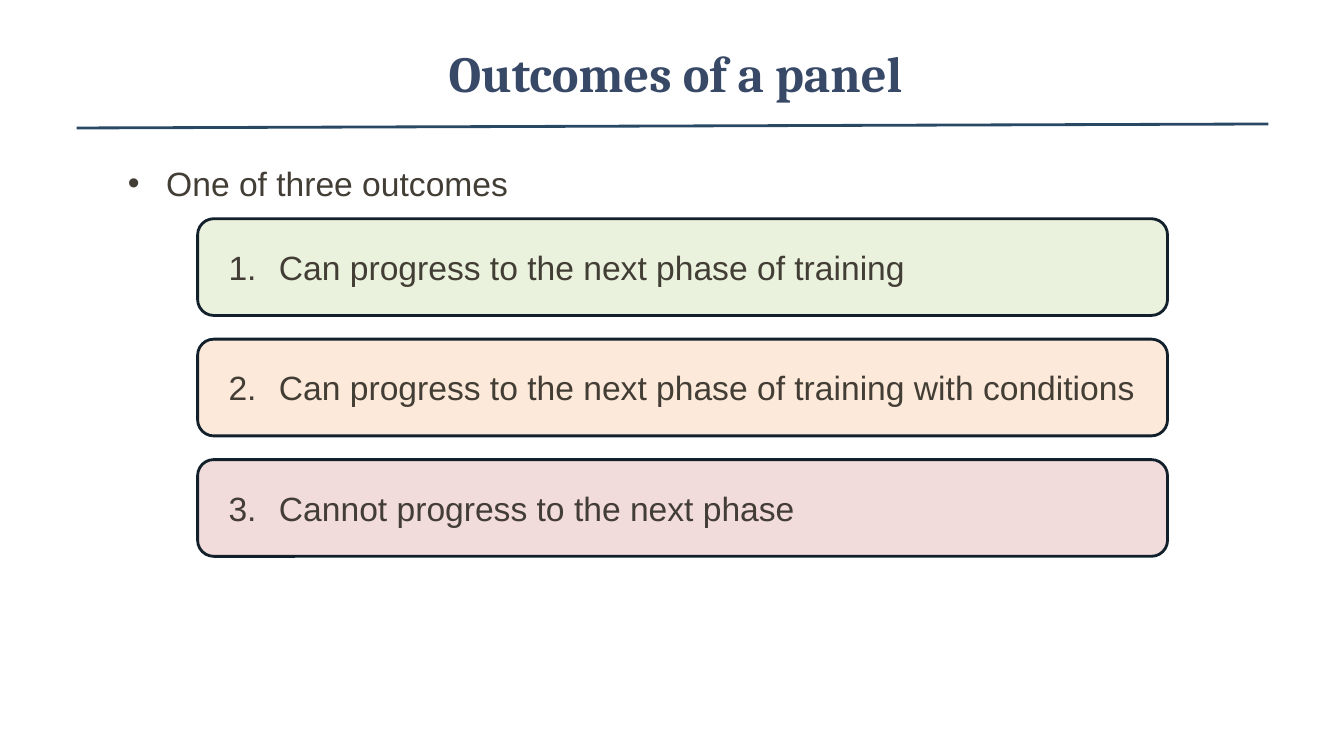
from lxml import etree
from pptx import Presentation
from pptx.dml.color import RGBColor
from pptx.enum import shapes, text
from pptx.oxml import ns
from pptx.util import Inches, Pt

# Content
TITLE = "Outcomes of a panel"
LEAD = "One of three outcomes"
GREEN = RGBColor(0xEA, 0xF1, 0xDD)
PEACH = RGBColor(0xFD, 0xE9, 0xD9)
PINK = RGBColor(0xF2, 0xDB, 0xDB)
OUTCOMES = [
    ("Can progress to the next phase of training", GREEN),
    ("Can progress to the next phase of training with conditions", PEACH),
    ("Cannot progress to the next phase", PINK),
]

# Colours and layout
NAVY = RGBColor(0x38, 0x49, 0x67)
RULE = RGBColor(0x29, 0x48, 0x64)
EDGE = RGBColor(0x12, 0x20, 0x2C)
INK = RGBColor(0x43, 0x3E, 0x35)
LEFT, TOP, WIDTH, HEIGHT, STEP = 1.96, 2.17, 9.62, 0.96, 1.195


def write(par, words, size, face, color, bold=False):
    run = par.add_run()
    run.text = words
    font = run.font
    font.size, font.name, font.bold = Pt(size), face, bold
    font.color.rgb = color


def add_item(frame, words, hang, tag, **marks):
    """Write one bulleted or numbered line with a hanging indent."""
    par = frame.paragraphs[0]
    par.alignment = text.PP_ALIGN.LEFT
    props = par._p.get_or_add_pPr()
    props.set("marL", str(Inches(hang)))
    props.set("indent", str(-Inches(hang)))
    etree.SubElement(props, ns.qn("a:buFont"), typeface="Arial")
    etree.SubElement(props, ns.qn(tag), **marks)
    write(par, words, 24, "Arial", INK)


def main():
    prs = Presentation()
    prs.slide_width, prs.slide_height = Inches(13.33), Inches(7.5)
    slide = prs.slides.add_slide(prs.slide_layouts[5])

    # Title
    title = slide.shapes.title
    title.left, title.top = Inches(0), Inches(0.32)
    title.width, title.height = Inches(13.4), Inches(0.79)
    title.text_frame.vertical_anchor = text.MSO_ANCHOR.MIDDLE
    head = title.text_frame.paragraphs[0]
    head.alignment = text.PP_ALIGN.CENTER
    write(head, TITLE, 36, "Cambria", NAVY, True)

    # Rule under the title
    rule = slide.shapes.add_connector(
        shapes.MSO_CONNECTOR.STRAIGHT,
        Inches(0.76), Inches(1.27), Inches(12.58), Inches(1.23))
    rule.line.color.rgb = RULE
    rule.line.width = Pt(2)
    etree.SubElement(rule._element.spPr, ns.qn("a:effectLst"))

    # Lead line
    lead = slide.shapes.add_textbox(
        Inches(1.17), Inches(1.57), Inches(10.41), Inches(0.5))
    lead.text_frame.word_wrap = True
    add_item(lead.text_frame, LEAD, 0.38, "a:buChar", char="•")

    # Numbered outcome boxes
    for i, (words, fill) in enumerate(OUTCOMES):
        box = slide.shapes.add_shape(
            shapes.MSO_SHAPE.ROUNDED_RECTANGLE,
            Inches(LEFT), Inches(TOP + i * STEP),
            Inches(WIDTH), Inches(HEIGHT))
        box.shadow.inherit = False
        box.fill.solid()
        box.fill.fore_color.rgb = fill
        box.line.color.rgb = EDGE
        box.line.width = Pt(2)
        frame = box.text_frame
        frame.word_wrap = True
        frame.vertical_anchor = text.MSO_ANCHOR.MIDDLE
        # The shape's rounded corners add 0.05 to the left inset
        frame.margin_left, frame.margin_right = Inches(0.26), Inches(0.1)
        add_item(frame, words, 0.5, "a:buAutoNum",
                 type="arabicPeriod", startAt=str(i + 1))

    prs.save("out.pptx")


if __name__ == "__main__":
    main()
